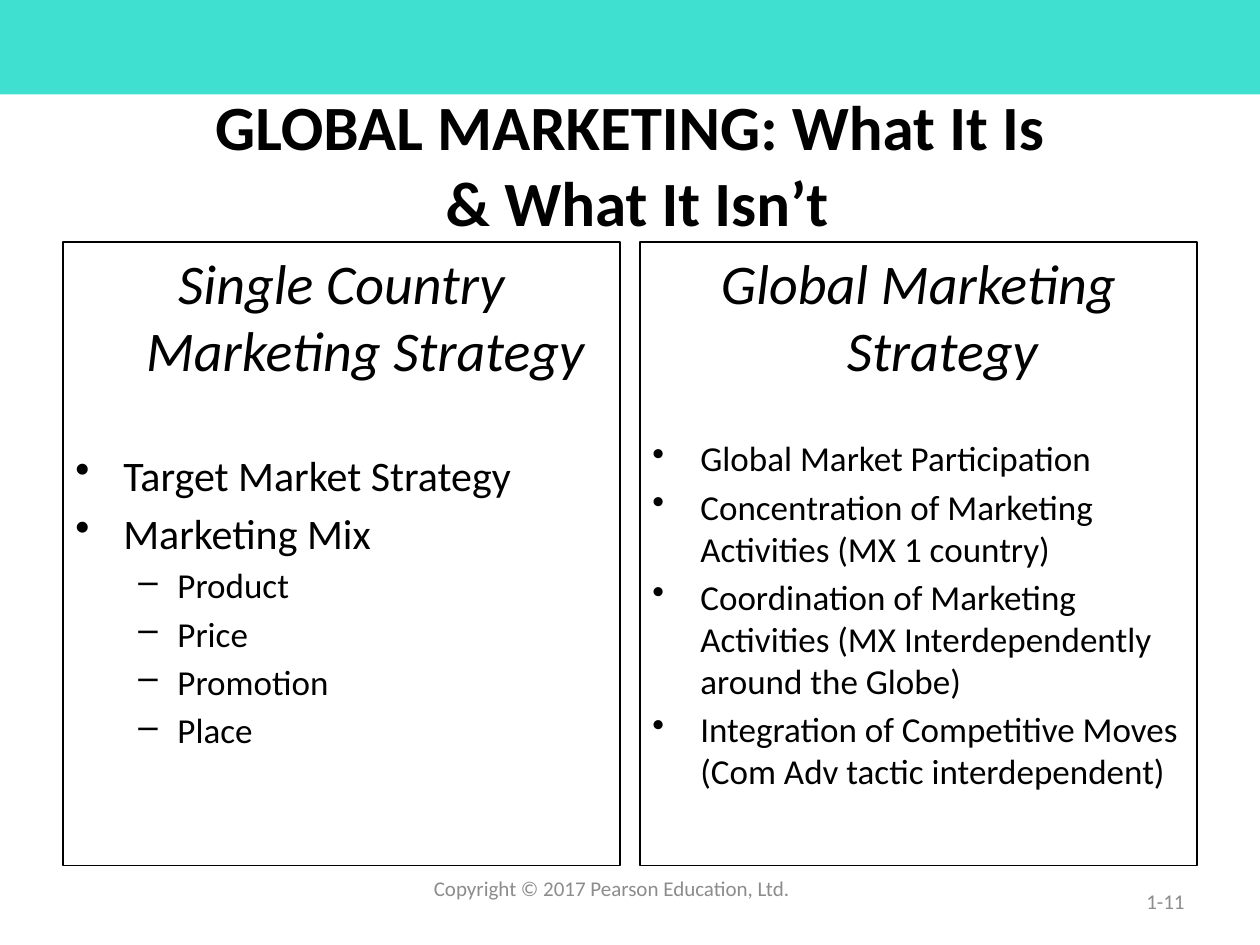
from lxml import etree
from pptx import Presentation
from pptx.dml.color import RGBColor
from pptx.enum import shapes, text
from pptx.oxml.ns import qn
from pptx.util import Inches, Pt

TURQUOISE = RGBColor(0x40, 0xE0, 0xD0)
BLACK = RGBColor(0x00, 0x00, 0x00)
GRAY = RGBColor(0x8C, 0x8C, 0x8C)
FONT = "Calibri"
MARGIN = 0.5
COLUMN_WIDTH = 4.42
# Per outline level: bullet, left indent and hanging indent in inches
LEVELS = [("•", 0.38, 0.38), ("–", 0.81, 0.31)]

COLUMNS = [
    # heading, gap below the heading in points, (level, size, wording) items
    ("Single Country Marketing Strategy", 38, [
        (0, 24, "Target Market Strategy"),
        (0, 24, "Marketing Mix"),
        (1, 20, "Product"),
        (1, 20, "Price"),
        (1, 20, "Promotion"),
        (1, 20, "Place"),
    ]),
    ("Global Marketing Strategy", 31, [
        (0, 20, "Global Market Participation"),
        (0, 20, "Concentration of Marketing Activities (MX 1 country)"),
        (0, 20, "Coordination of Marketing Activities "
                "(MX Interdependently around the Globe)"),
        (0, 20, "Integration of Competitive Moves "
                "(Com Adv tactic interdependent)"),
    ]),
]


def format_font(font, size, color=BLACK, **styles):
    font.color.rgb = color
    values = {"name": FONT, "size": Pt(size), **styles}
    for name, value in values.items():
        setattr(font, name, value)


def set_indent(paragraph, level, bulleted):
    bullet, left, hanging = LEVELS[level]
    properties = paragraph._p.get_or_add_pPr()
    properties.set("marL", str(Inches(left)))
    properties.set("indent", str(-Inches(hanging)))
    if bulleted:
        etree.SubElement(properties, qn("a:buChar")).set("char", bullet)
    paragraph.level = level


def add_box(slide, left, top, width, height):
    box = slide.shapes.add_shape(
        shapes.MSO_SHAPE.RECTANGLE,
        Inches(left), Inches(top), Inches(width), Inches(height))
    box.shadow.inherit = False
    return box


def add_banner(slide):
    banner = add_box(slide, 0, 0, 10, 0.75)
    banner.fill.solid()
    banner.fill.fore_color.rgb = TURQUOISE
    banner.line.fill.background()


def set_title(slide):
    title = slide.shapes.title
    place = {"left": MARGIN, "top": 0.67, "width": 9, "height": 1.25}
    for name, value in place.items():
        setattr(title, name, Inches(value))
    frame = title.text_frame
    frame.text = "GLOBAL MARKETING: What It Is\v & What It Isn’t"
    frame.vertical_anchor = text.MSO_ANCHOR.MIDDLE
    paragraph = frame.paragraphs[0]
    paragraph.alignment = text.PP_ALIGN.CENTER
    format_font(paragraph.font, 36, bold=True)


def add_strategy(slide, left, heading, gap, items):
    panel = add_box(slide, left, 1.92, COLUMN_WIDTH, 4.95)
    panel.fill.background()
    panel.line.color.rgb = BLACK
    panel.line.width = Pt(0.75)
    frame = panel.text_frame
    frame.word_wrap = True
    frame.vertical_anchor = text.MSO_ANCHOR.TOP

    # Heading
    title = frame.paragraphs[0]
    title.text = heading
    set_indent(title, 0, bulleted=False)
    title.alignment = text.PP_ALIGN.CENTER
    format_font(title.font, 32, italic=True)

    # Bulleted outline
    for index, (level, size, wording) in enumerate(items):
        item = frame.add_paragraph()
        item.text = wording
        set_indent(item, level, bulleted=True)
        item.alignment = text.PP_ALIGN.LEFT
        item.space_before = Pt(size * 0.18 if index else gap)
        format_font(item.font, size)


def add_footer(slide, left, width, wording, alignment, anchor):
    footer = slide.shapes.add_textbox(
        Inches(left), Inches(6.95), Inches(width), Inches(0.4))
    frame = footer.text_frame
    frame.word_wrap = True
    frame.margin_top = frame.margin_bottom = 0
    frame.vertical_anchor = anchor
    paragraph = frame.paragraphs[0]
    paragraph.text = wording
    paragraph.alignment = alignment
    format_font(paragraph.font, 12, GRAY)


def main():
    deck = Presentation()
    deck.slide_width, deck.slide_height = Inches(10), Inches(7.5)
    slide = deck.slides.add_slide(deck.slide_layouts[5])

    add_banner(slide)
    set_title(slide)

    # Two strategies side by side, flush with both margins
    lefts = (MARGIN, 10 - MARGIN - COLUMN_WIDTH)
    for left, column in zip(lefts, COLUMNS):
        add_strategy(slide, left, *column)

    # Copyright line and page number
    add_footer(slide, 3.13, 3.45, "Copyright © 2017 Pearson Education, Ltd.",
               text.PP_ALIGN.CENTER, text.MSO_ANCHOR.TOP)
    add_footer(slide, 7.17, 2.33, "1-11",
               text.PP_ALIGN.RIGHT, text.MSO_ANCHOR.MIDDLE)
    deck.save("out.pptx")


if __name__ == "__main__":
    main()
